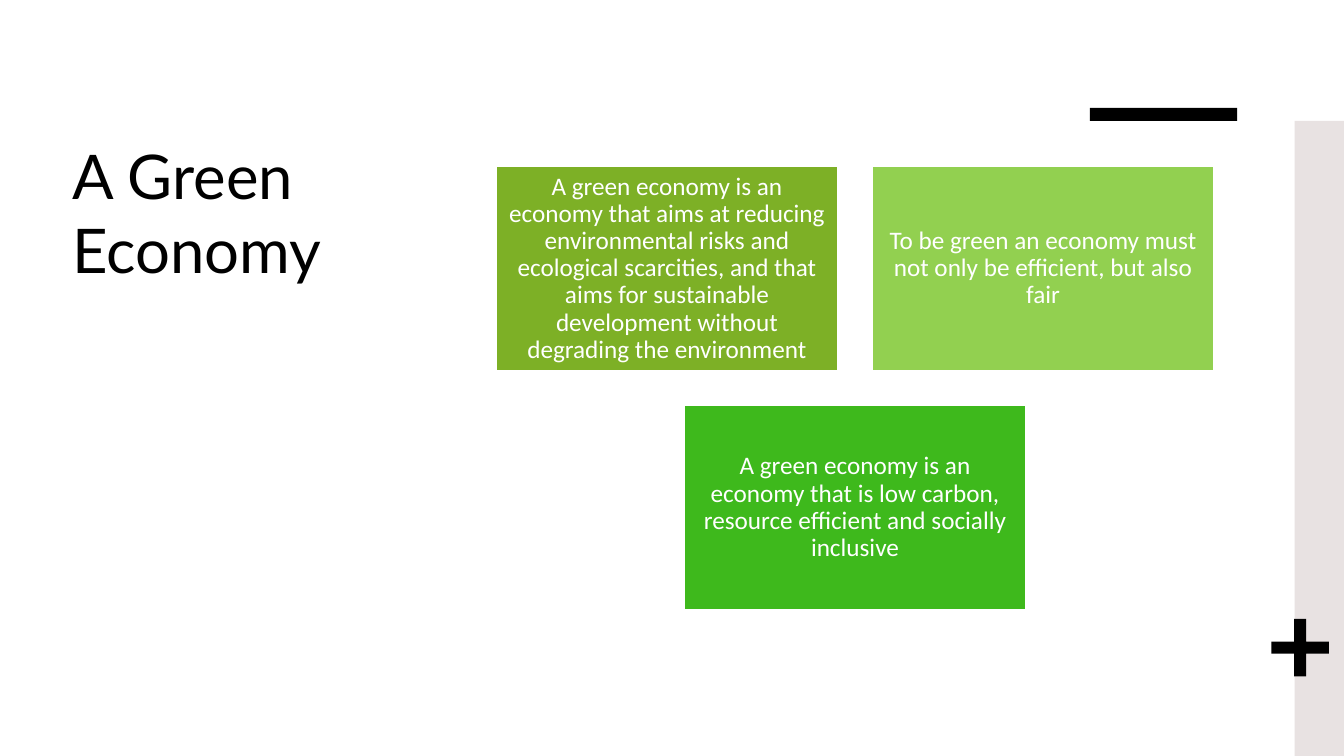
import pptx
import pptx.util
import pptx.dml.color
import pptx.enum.shapes
import pptx.enum.text

Inches = pptx.util.Inches
Pt = pptx.util.Pt
RGBColor = pptx.dml.color.RGBColor
SHAPE = pptx.enum.shapes.MSO_SHAPE
ALIGN = pptx.enum.text.PP_ALIGN
ANCHOR = pptx.enum.text.MSO_ANCHOR

BLACK = RGBColor(0x00, 0x00, 0x00)
WHITE = RGBColor(0xFF, 0xFF, 0xFF)
GREY = RGBColor(0xE8, 0xE2, 0xE2)
OLIVE = RGBColor(0x7D, 0xB0, 0x26)
LIME = RGBColor(0x92, 0xD0, 0x50)
GREEN = RGBColor(0x3E, 0xB9, 0x1C)

WIDTH, HEIGHT = 13.33, 7.5
COLUMNS = 2
GAP = 0.34
CARDS = [
    ("A green economy is an economy that aims at reducing environmental "
     "risks and ecological scarcities, and that aims for sustainable "
     "development without degrading the environment", OLIVE),
    ("To be green an economy must not only be efficient, but also fair", LIME),
    ("A green economy is an economy that is low carbon, resource efficient "
     "and socially inclusive", GREEN),
]


def add_block(slide, kind, box, color):
    """Add a filled shape without line or shadow; box is in inches."""
    block = slide.shapes.add_shape(kind, *map(Inches, box))
    block.shadow.inherit = False
    block.fill.solid()
    block.fill.fore_color.rgb = color
    block.line.fill.background()
    return block


def add_run(para, text, font, size, color):
    run = para.add_run()
    run.text = text
    run.font.name = font
    run.font.size = Pt(size)
    run.font.color.rgb = color


def add_title(slide, box):
    frame = slide.shapes.add_textbox(*map(Inches, box)).text_frame
    frame.word_wrap = True
    add_run(frame.paragraphs[0], "A Green Economy", "Lato", 44, BLACK)


def add_decor(slide, box):
    """Add the side band in the box, with the bar and plus set around it."""
    left, top, _, _ = box
    add_block(slide, SHAPE.RECTANGLE, box, GREY)
    add_block(slide, SHAPE.RECTANGLE, (left - 2.03, top - 0.13, 1.46, 0.13), BLACK)
    plus = add_block(slide, SHAPE.CROSS, (left - 0.23, top + 4.94, 0.57, 0.57), BLACK)
    plus.adjustments[0] = 0.395


def add_card(slide, box, text, color):
    card = add_block(slide, SHAPE.RECTANGLE, box, color)
    card.line.color.rgb = WHITE
    card.line.width = Pt(1)
    frame = card.text_frame
    frame.word_wrap = True
    frame.vertical_anchor = ANCHOR.MIDDLE
    frame.margin_left = frame.margin_right = Inches(0.07)
    frame.margin_top = frame.margin_bottom = Inches(0.07)
    para = frame.paragraphs[0]
    para.alignment = ALIGN.CENTER
    para.line_spacing = 0.9
    add_run(para, text, "Calibri", 18, WHITE)


def add_cards(slide, box):
    """Fill the box row by row, centring a row that is not full."""
    left, top, width, height = box
    rows = [CARDS[i:i + COLUMNS] for i in range(0, len(CARDS), COLUMNS)]
    wide = (width - GAP * (COLUMNS - 1)) / COLUMNS
    high = (height - GAP * (len(rows) - 1)) / len(rows)
    for line, row in enumerate(rows):
        start = left + (COLUMNS - len(row)) * (wide + GAP) / 2
        for col, (text, color) in enumerate(row):
            place = (start + col * (wide + GAP), top + line * (high + GAP), wide, high)
            add_card(slide, place, text, color)


def main():
    deck = pptx.Presentation()
    deck.slide_width = Inches(WIDTH)
    deck.slide_height = Inches(HEIGHT)
    slide = deck.slides.add_slide(deck.slide_layouts[6])
    add_title(slide, (0.62, 1.32, 3.5, 4.4))
    add_decor(slide, (12.84, 1.2, WIDTH - 12.84, HEIGHT - 1.2))
    add_cards(slide, (4.92, 1.65, 7.12, 4.4))
    deck.save("out.pptx")


if __name__ == "__main__":
    main()
